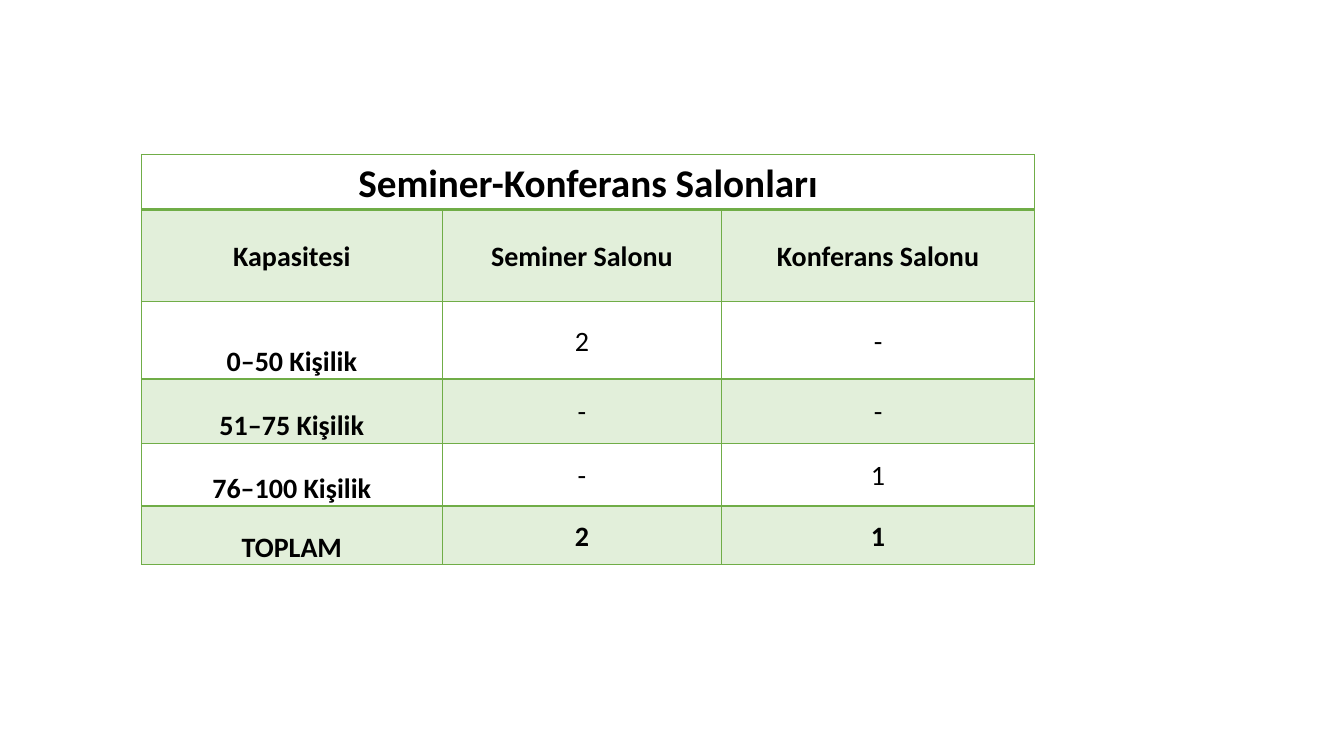
import pptx
import pptx.util
import pptx.dml.color
import pptx.enum.text
import pptx.oxml
import pptx.oxml.ns

Pt = pptx.util.Pt
Anchor = pptx.enum.text.MSO_ANCHOR

GREEN, PALE_GREEN, BLACK = "70AD47", "E2EFDA", "000000"
TITLE = "Seminer-Konferans Salonları"
ROWS = [
    (TITLE, "", ""),
    ("Kapasitesi", "Seminer Salonu", "Konferans Salonu"),
    ("0–50 Kişilik", "2", "-"),
    ("51–75 Kişilik", "-", "-"),
    ("76–100 Kişilik", "-", "1"),
    ("TOPLAM", "2", "1"),
]
COLUMN_WIDTHS = [215, 199.5, 223.5]
ROW_HEIGHTS = [39.5, 65.7, 55.3, 46, 44.7, 42]


def color(value):
    return pptx.dml.color.RGBColor.from_string(value)


def set_borders(cell, widths):
    """Draw green cell edges; widths are in points for left, right, top, bottom."""
    properties = cell._tc.get_or_add_tcPr()
    for side, width in zip("LRTB", widths):
        properties.append(pptx.oxml.parse_xml(
            f'<a:ln{side} {pptx.oxml.ns.nsdecls("a")} w="{Pt(width)}">'
            f'<a:solidFill><a:srgbClr val="{GREEN}"/></a:solidFill>'
            f'</a:ln{side}>'))


def set_fill(cell, value):
    if value:
        cell.fill.solid()
        cell.fill.fore_color.rgb = color(value)
    else:
        cell.fill.background()


def set_text(cell, text, size, bold, anchor):
    cell.margin_left = cell.margin_right = Pt(3.6)
    cell.margin_top = cell.margin_bottom = 0
    cell.vertical_anchor = anchor
    cell.text = text
    para = cell.text_frame.paragraphs[0]
    para.alignment = pptx.enum.text.PP_ALIGN.CENTER
    para.line_spacing = 1.07
    para.font.name = "Calibri"
    para.font.size = Pt(size)
    para.font.bold = bold
    para.font.color.rgb = color(BLACK)


def add_hall_table(page, left, top):
    frame = page.shapes.add_table(
        len(ROWS), len(COLUMN_WIDTHS), Pt(left), Pt(top),
        Pt(sum(COLUMN_WIDTHS)), Pt(sum(ROW_HEIGHTS)))
    table = frame.table
    table.first_row = table.horz_banding = False
    for column, width in zip(table.columns, COLUMN_WIDTHS):
        column.width = Pt(width)
    for row, height in zip(table.rows, ROW_HEIGHTS):
        row.height = Pt(height)

    # The heading spans all columns
    table.cell(0, 0).merge(table.cell(0, len(COLUMN_WIDTHS) - 1))

    last = len(ROWS) - 1
    for r, texts in enumerate(ROWS):
        for c, text in enumerate(texts):
            cell = table.cell(r, c)
            set_borders(cell, (1, 1, 2 if r == 1 else 1, 2 if r == 0 else 1))
            set_fill(cell, PALE_GREEN if r % 2 else None)
            # Row labels sit at the bottom; everything else is centred
            is_label = c == 0 and r > 1
            set_text(cell, text, 28 if r == 0 else 20,
                     is_label or r in (0, 1, last),
                     Anchor.BOTTOM if is_label else Anchor.MIDDLE)


def main():
    deck = pptx.Presentation()
    deck.slide_width, deck.slide_height = Pt(960), Pt(540)
    page = deck.slides.add_slide(deck.slide_layouts[6])
    add_hall_table(page, 101, 110.3)
    deck.save("out.pptx")


if __name__ == "__main__":
    main()
